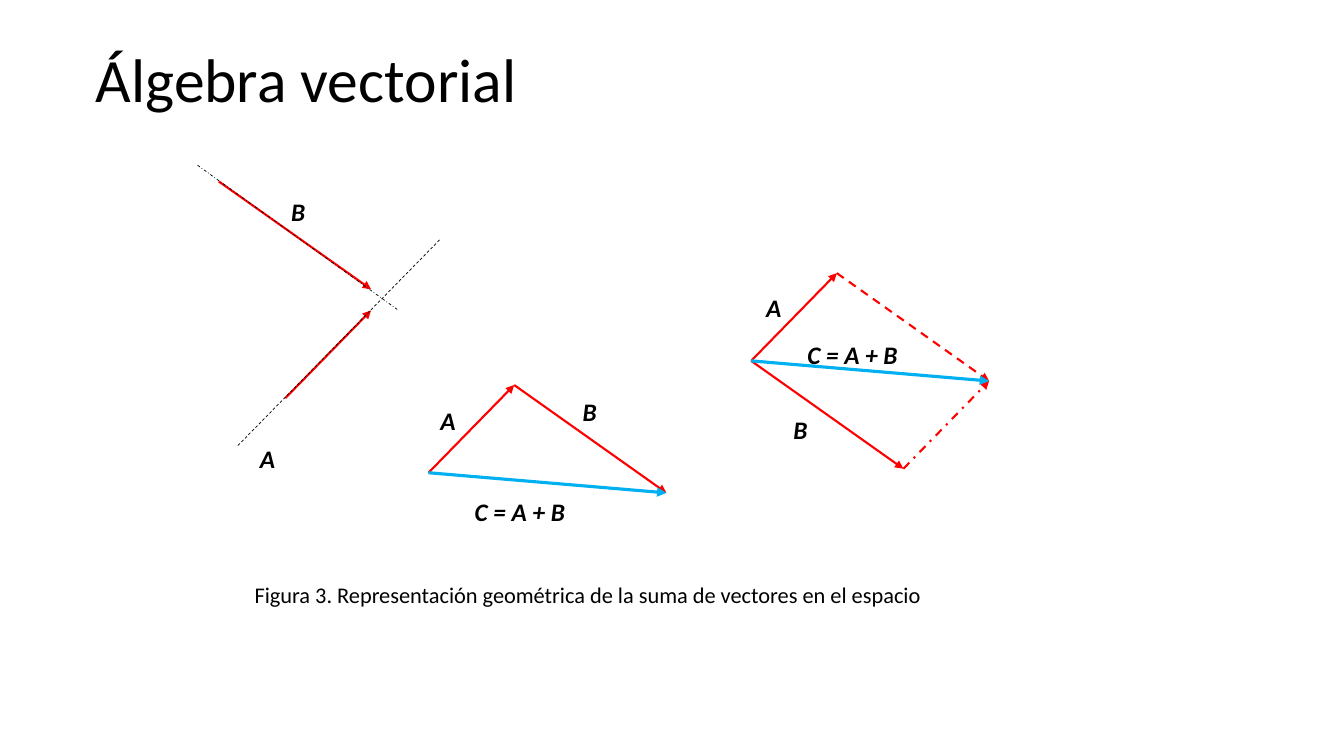
from pptx import Presentation
from pptx.dml.color import RGBColor
from pptx.enum.dml import MSO_LINE
from pptx.enum.shapes import MSO_CONNECTOR
from pptx.enum.text import MSO_ANCHOR, MSO_AUTO_SIZE, PP_ALIGN
from pptx.oxml.ns import qn
from pptx.util import Inches, Pt
from lxml import etree

STRAIGHT = MSO_CONNECTOR.STRAIGHT
DASH, DASH_DOT = MSO_LINE.DASH, MSO_LINE.DASH_DOT
RED, BLUE, BLACK = "FF0000", "00B0F0", "000000"
AX, AY = 0.85, -0.87  # vector A
BX, BY = 1.51, 1.07   # vector B
CX, CY = AX + BX, AY + BY


def add_line(x, y, dx, dy, color, width=1.5, dash=None, arrow=True):
    """Draw a line from (x, y) by the offset (dx, dy), in inches."""
    line = s.shapes.add_connector(STRAIGHT, Inches(x), Inches(y),
                                  Inches(x + dx), Inches(y + dy))
    line.line.color.rgb = RGBColor.from_string(color)
    line.line.width = Pt(width)
    if dash:
        line.line.dash_style = dash
    if arrow:
        etree.SubElement(line.line._get_or_add_ln(), qn("a:tailEnd"), type="triangle")
    etree.SubElement(line._element.spPr, qn("a:effectLst"))


def add_text(text, x, y, w, h, size):
    sp = s.shapes.add_textbox(Inches(x), Inches(y), Inches(w), Inches(h))
    tf = sp.text_frame
    tf.word_wrap = True
    p = tf.paragraphs[0]
    p.text = text
    p.font.size = Pt(size)
    p.font.name = "Calibri"
    p.font.color.rgb = RGBColor.from_string(BLACK)
    return p


prs = Presentation()
prs.slide_width, prs.slide_height = Inches(13.33), Inches(7.5)
s = prs.slides.add_slide(prs.slide_layouts[5])

# Title
title = s.shapes.title
title.left, title.top = Inches(0.85), Inches(0.44)
title.width, title.height = Inches(11.5), Inches(1.45)
tf = title.text_frame
tf.text = "Álgebra vectorial"
tf.vertical_anchor = MSO_ANCHOR.TOP
tf.auto_size = MSO_AUTO_SIZE.NONE
p = tf.paragraphs[0]
p.alignment = PP_ALIGN.LEFT
p.line_spacing = 0.9
p.font.size = Pt(44)
p.font.name = "Calibri"
p.font.color.rgb = RGBColor.from_string(BLACK)

# Caption
p = add_text("Figura 3. Representación geométrica de la suma de vectores en el espacio",
             2.04, 5.72, 7.58, 0.37, 16)
p.alignment = PP_ALIGN.CENTER
p.space_before = p.space_after = Pt(6)

# Separate vectors on their lines of action
add_line(2.83, 3.95, AX, AY, RED)
add_line(2.36, 4.42, 2.01, -2.05, BLACK, 0.5, DASH, arrow=False)
add_line(2.17, 1.8, BX, BY, RED)
add_line(1.96, 1.64, 1.98, 1.43, BLACK, 0.5, DASH_DOT, arrow=False)

# Triangle rule
x, y = 4.25, 4.69
add_line(x, y, AX, AY, RED)
add_line(x + AX, y + AY, BX, BY, RED)
add_line(x, y, CX, CY, BLUE, 2.25)

# Parallelogram rule
x, y = 7.45, 3.58
add_line(x + BX, y + BY, AX, AY, RED, dash=DASH_DOT)
add_line(x, y, AX, AY, RED)
add_line(x + AX, y + AY, BX, BY, RED, dash=DASH)
add_line(x, y, BX, BY, RED)
add_line(x, y, CX, CY, BLUE, 2.25)

# Vector names
for name, x, y in [
    ("A", 2.48, 4.35), ("B", 2.79, 1.9),
    ("A", 4.27, 3.97), ("B", 5.68, 3.88), ("C = A + B", 4.61, 4.87),
    ("A", 7.5, 2.85), ("B", 7.77, 4.06), ("C = A + B", 7.91, 3.32),
]:
    p = add_text(name, x, y, 0.43 if len(name) == 1 else 1.54, 0.4, 18)
    p.font.bold = p.font.italic = True

prs.save("out.pptx")
